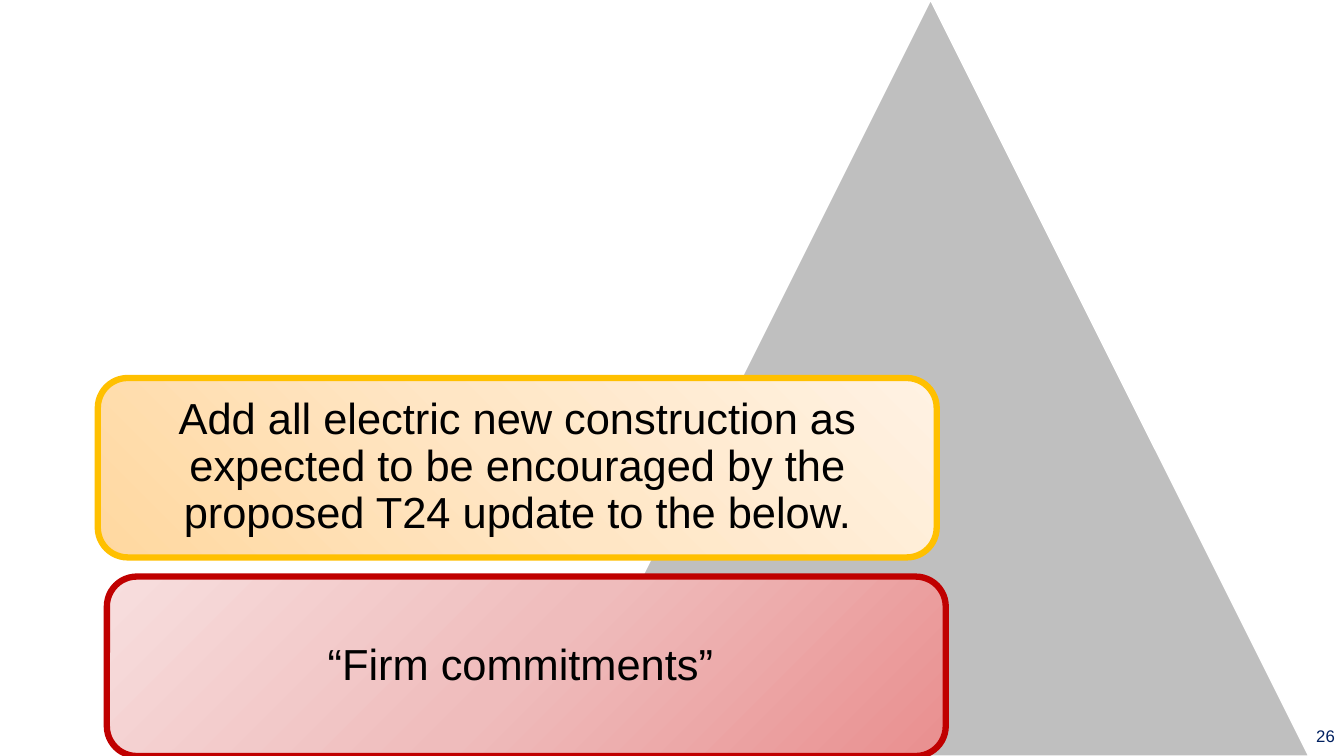
from dataclasses import dataclass

import pptx
import pptx.dml.color
import pptx.enum.shapes
import pptx.enum.text
import pptx.oxml.ns
import pptx.slide
import pptx.util
from lxml import etree

RGBColor = pptx.dml.color.RGBColor
Inches = pptx.util.Inches
Pt = pptx.util.Pt
MSO_SHAPE = pptx.enum.shapes.MSO_SHAPE
PP_ALIGN = pptx.enum.text.PP_ALIGN
MSO_ANCHOR = pptx.enum.text.MSO_ANCHOR
qn = pptx.oxml.ns.qn

WHITE = RGBColor(0xFF, 0xFF, 0xFF)
BLACK = RGBColor(0x00, 0x00, 0x00)
GRAY = RGBColor(0xBF, 0xBF, 0xBF)
NAVY = RGBColor(0x00, 0x20, 0x60)
RED = RGBColor(0xC0, 0x00, 0x00)
GOLD = RGBColor(0xFF, 0xC0, 0x00)
RED_SHADES = (
    RGBColor(0xE9, 0x8F, 0x8F),
    RGBColor(0xEF, 0xBC, 0xBC),
    RGBColor(0xF7, 0xDE, 0xDE),
)
GOLD_SHADES = (
    RGBColor(0xFF, 0xD8, 0xA0),
    RGBColor(0xFF, 0xE6, 0xC5),
    RGBColor(0xFF, 0xF2, 0xE3),
)

FONT = "Arial"
BOX_WIDTH, BOX_HEIGHT, BOX_INSET = 8.32, 1.78, 0.13


@dataclass(frozen=True)
class Level:
    text: str
    left: float
    top: float
    border: RGBColor
    shades: tuple[RGBColor, ...]
    focus: dict[str, int]


LEVELS = [
    Level("“Firm commitments” ", 1.06, 5.72, RED, RED_SHADES, {"l": 100, "t": 100}),
    Level(
        "Add all electric new construction as expected to be encouraged "
        "by the proposed T24 update to the below.",
        0.97, 3.75, GOLD, GOLD_SHADES, {"t": 100, "r": 100},
    ),
]


def set_radial_fill(sp, shades: tuple[RGBColor, ...], focus: dict[str, int]) -> None:
    sp.fill.gradient()
    grad = sp._element.spPr.find(qn("a:gradFill"))
    for child in list(grad):
        grad.remove(child)
    stops = etree.SubElement(grad, qn("a:gsLst"))
    for i, shade in enumerate(shades):
        pos = 100000 * i // (len(shades) - 1)
        stop = etree.SubElement(stops, qn("a:gs"), pos=str(pos))
        etree.SubElement(stop, qn("a:srgbClr"), val=str(shade))
    path = etree.SubElement(grad, qn("a:path"), path="circle")
    sides = {side: str(focus.get(side, 0) * 1000) for side in "ltrb"}
    etree.SubElement(path, qn("a:fillToRect"), sides)


def add_page_number(slide: pptx.slide.Slide, number: str) -> None:
    title = slide.shapes.title
    title.left, title.top = Inches(11.41), Inches(7.1)
    title.width, title.height = Inches(1.93), Inches(0.4)
    tf = title.text_frame
    tf.auto_size = pptx.enum.text.MSO_AUTO_SIZE.NONE
    tf.vertical_anchor = MSO_ANCHOR.MIDDLE
    p = tf.paragraphs[0]
    p.text = number
    p.alignment = PP_ALIGN.RIGHT
    p.font.name, p.font.size = FONT, Pt(12)
    p.font.color.rgb = NAVY


def add_pyramid(slide: pptx.slide.Slide) -> None:
    sp = slide.shapes.add_shape(
        MSO_SHAPE.ISOSCELES_TRIANGLE, Inches(5.48), 0, Inches(7.5), Inches(7.5)
    )
    sp.shadow.inherit = False
    sp.fill.solid()
    sp.fill.fore_color.rgb = GRAY
    sp.line.color.rgb = WHITE
    sp.line.width = Pt(1)


def add_level(slide: pptx.slide.Slide, level: Level) -> None:
    sp = slide.shapes.add_shape(
        MSO_SHAPE.ROUNDED_RECTANGLE, Inches(level.left), Inches(level.top),
        Inches(BOX_WIDTH), Inches(BOX_HEIGHT),
    )
    sp.shadow.inherit = False
    set_radial_fill(sp, level.shades, level.focus)
    sp.line.color.rgb = level.border
    sp.line.width = Pt(4.5)
    tf = sp.text_frame
    tf.word_wrap = True
    tf.vertical_anchor = MSO_ANCHOR.MIDDLE
    tf.margin_left = tf.margin_right = Inches(BOX_INSET)
    tf.margin_top = tf.margin_bottom = Inches(BOX_INSET)
    p = tf.paragraphs[0]
    p.text = level.text
    p.alignment = PP_ALIGN.CENTER
    p.line_spacing = 0.9
    p.font.name, p.font.size = FONT, Pt(31)
    p.font.color.rgb = BLACK


def main() -> None:
    prs = pptx.Presentation()
    prs.slide_width, prs.slide_height = Inches(13.33), Inches(7.5)
    slide = prs.slides.add_slide(prs.slide_layouts[5])
    add_page_number(slide, "26")
    add_pyramid(slide)
    for level in LEVELS:
        add_level(slide, level)
    prs.save("out.pptx")


if __name__ == "__main__":
    main()
